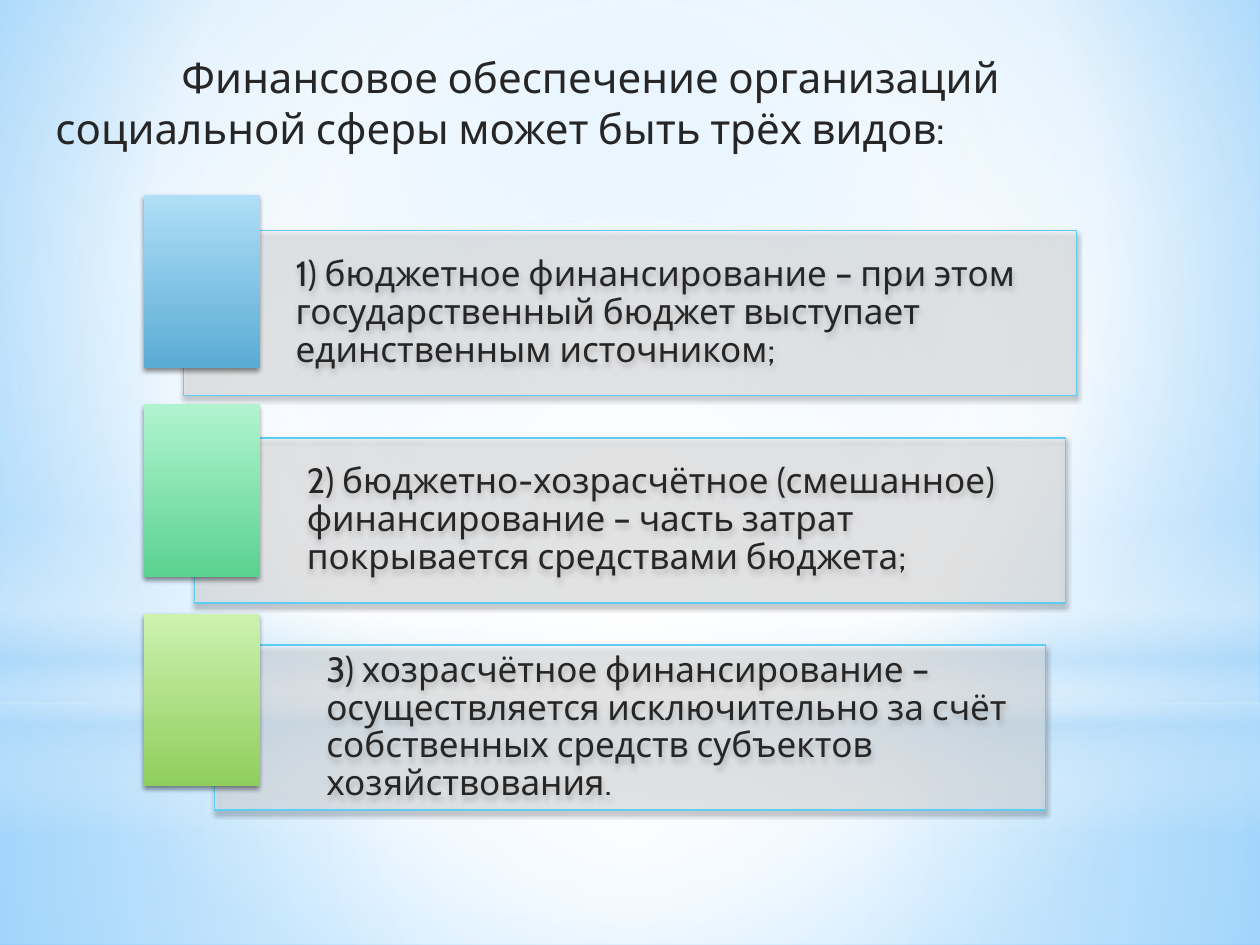
from lxml import etree
from pptx import Presentation
from pptx.dml.color import RGBColor
from pptx.enum.shapes import MSO_SHAPE
from pptx.enum.text import MSO_ANCHOR, MSO_AUTO_SIZE, PP_ALIGN
from pptx.oxml.ns import qn
from pptx.util import Inches, Pt

FONT, INK, OUTLINE = "Cabin", "262626", "5ECCF3"
WIDTH, HEIGHT = 10, 7.5

TITLE = "Финансовое обеспечение организаций социальной сферы может быть трёх видов:"
# text, panel width, tab gradient from top to bottom
KINDS = [
    ("1) бюджетное финансирование – при этом государственный бюджет "
     "выступает единственным источником;", 7.09, ("B0DFF7", "5AABD5")),
    ("2) бюджетно-хозрасчётное (смешанное) финансирование – часть затрат "
     "покрывается средствами бюджета;", 6.91, ("B0F4CF", "5BD290")),
    ("3) хозрасчётное финансирование – осуществляется исключительно за счёт "
     "собственных средств субъектов хозяйствования.", 6.6, ("CDF2B0", "8FCE5C")),
]

# Gradient stops: position %, colour, opacity %
SKY = [(0, "9ED5FF", 100), (60, "FFFFFF", 100), (100, "5BB9FF", 100)]
CENTRE = (50, 50, 50, 50)
# preset, top, height, stops, focus of a radial gradient (None for a vertical one)
GLOWS = [
    (MSO_SHAPE.RECTANGLE, 5.58, 1.92,
     [(0, "FFFFFF", 91), (37, "FFFFFF", 76), (100, "B4DCFA", 79)], CENTRE),
    (MSO_SHAPE.RECTANGLE, 0, 5.58,
     [(0, "FFFFFF", 89), (48, "FFFFFF", 62), (100, "B4DCFA", 79)], CENTRE),
    (MSO_SHAPE.RECTANGLE, 4.12, 2.5,
     [(0, "FFFFFF", 0), (29, "FFFFFF", 30), (45, "B4DCFA", 40),
      (55, "FFFFFF", 26), (65, "B4DCFA", 60), (100, "FFFFFF", 0)], None),
    (MSO_SHAPE.OVAL, 1.75, 5.58,
     [(0, "FFFFFF", 100), (56, "FFFFFF", 0)], CENTRE),
]

PANEL_TOP, PANEL_STEP, PANEL_HEIGHT = 1.83, 1.645, 1.31
TAB_LEFT, TAB_TOP, TAB_STEP, TAB_WIDTH, TAB_HEIGHT = 1.14, 1.55, 1.66, 0.92, 1.37


def color(hex_code):
    return RGBColor.from_string(hex_code)


def add_child(parent, tag, **attributes):
    return etree.SubElement(parent, qn(tag), {k: str(v) for k, v in attributes.items()})


def add_color(parent, hex_code, opacity):
    element = add_child(parent, "a:srgbClr", val=hex_code)
    add_child(element, "a:alpha", val=opacity * 1000)


def set_gradient(fill, properties, stops, focus=None):
    """Fill radially around focus (left, top, right, bottom in %), or downwards."""
    fill.solid()
    solid = properties.find(qn("a:solidFill"))
    gradient = etree.Element(qn("a:gradFill"), rotWithShape="1")
    stop_list = add_child(gradient, "a:gsLst")
    for position, hex_code, opacity in stops:
        add_color(add_child(stop_list, "a:gs", pos=position * 1000), hex_code, opacity)
    if focus:
        path = add_child(gradient, "a:path", path="circle")
        add_child(path, "a:fillToRect", **{s: v * 1000 for s, v in zip("ltrb", focus)})
    else:
        add_child(gradient, "a:lin", ang=90 * 60000, scaled=0)
    properties.replace(solid, gradient)


def add_shadow(shape):
    effects = shape._element.spPr.find(qn("a:effectLst"))
    shadow = add_child(effects, "a:outerShdw", blurRad=Pt(3.1), dist=Pt(1.8),
                       dir=90 * 60000, rotWithShape=0)
    add_color(shadow, "000000", 45)


def add_plain(slide, preset, left, top, width, height):
    """Add a shape without outline or shadow."""
    shape = slide.shapes.add_shape(preset, *map(Inches, (left, top, width, height)))
    shape.line.fill.background()
    shape.shadow.inherit = False
    return shape


def set_text(shape, text, size, anchor):
    frame = shape.text_frame
    frame.text = text
    frame.word_wrap = True
    frame.auto_size = MSO_AUTO_SIZE.NONE
    frame.vertical_anchor = anchor
    paragraph = frame.paragraphs[0]
    paragraph.alignment = PP_ALIGN.LEFT
    paragraph.font.name = FONT
    paragraph.font.size = Pt(size)
    paragraph.font.color.rgb = color(INK)
    return paragraph


def add_panel(slide, text, top, width):
    panel = add_plain(slide, MSO_SHAPE.RECTANGLE, (WIDTH - width) / 2, top,
                      width, PANEL_HEIGHT)
    panel.fill.solid()
    panel.fill.fore_color.rgb = color("FFFFFF")
    fill_color = panel._element.spPr.find(qn("a:solidFill"))[0]
    add_child(fill_color, "a:alpha", val=40000)
    panel.line.color.rgb = color(OUTLINE)
    panel.line.width = Pt(0.75)
    add_shadow(panel)
    set_text(panel, text, 20, MSO_ANCHOR.MIDDLE).line_spacing = 0.9
    frame = panel.text_frame
    frame.margin_left = Inches(0.89)
    frame.margin_top = frame.margin_right = frame.margin_bottom = Inches(0.08)


def add_tab(slide, top, gradient):
    tab = add_plain(slide, MSO_SHAPE.RECTANGLE, TAB_LEFT, top, TAB_WIDTH, TAB_HEIGHT)
    start, end = gradient
    set_gradient(tab.fill, tab._element.spPr, [(0, start, 100), (100, end, 100)])
    add_shadow(tab)


def main():
    presentation = Presentation()
    presentation.slide_width, presentation.slide_height = Inches(WIDTH), Inches(HEIGHT)
    slide = presentation.slides.add_slide(presentation.slide_layouts[5])

    background = slide.background.fill
    background.solid()
    set_gradient(background, slide._element.find(".//" + qn("p:bgPr")),
                 SKY, (20, 10, 20, 60))
    for preset, top, height, stops, focus in GLOWS:
        glow = add_plain(slide, preset, 0, top, WIDTH, height)
        set_gradient(glow.fill, glow._element.spPr, stops, focus)

    for row, (text, width, gradient) in enumerate(KINDS):
        add_panel(slide, text, PANEL_TOP + row * PANEL_STEP, width)
        add_tab(slide, TAB_TOP + row * TAB_STEP, gradient)

    title = slide.shapes.title
    title.left, title.top, title.width, title.height = map(Inches, (0.34, 0.36, 9.13, 0.91))
    paragraph = set_text(title, TITLE, 24, MSO_ANCHOR.TOP)
    paragraph._p.get_or_add_pPr().set("indent", str(Inches(1)))
    slide.shapes._spTree.append(title._element)  # bring to front

    presentation.save("out.pptx")


if __name__ == "__main__":
    main()
